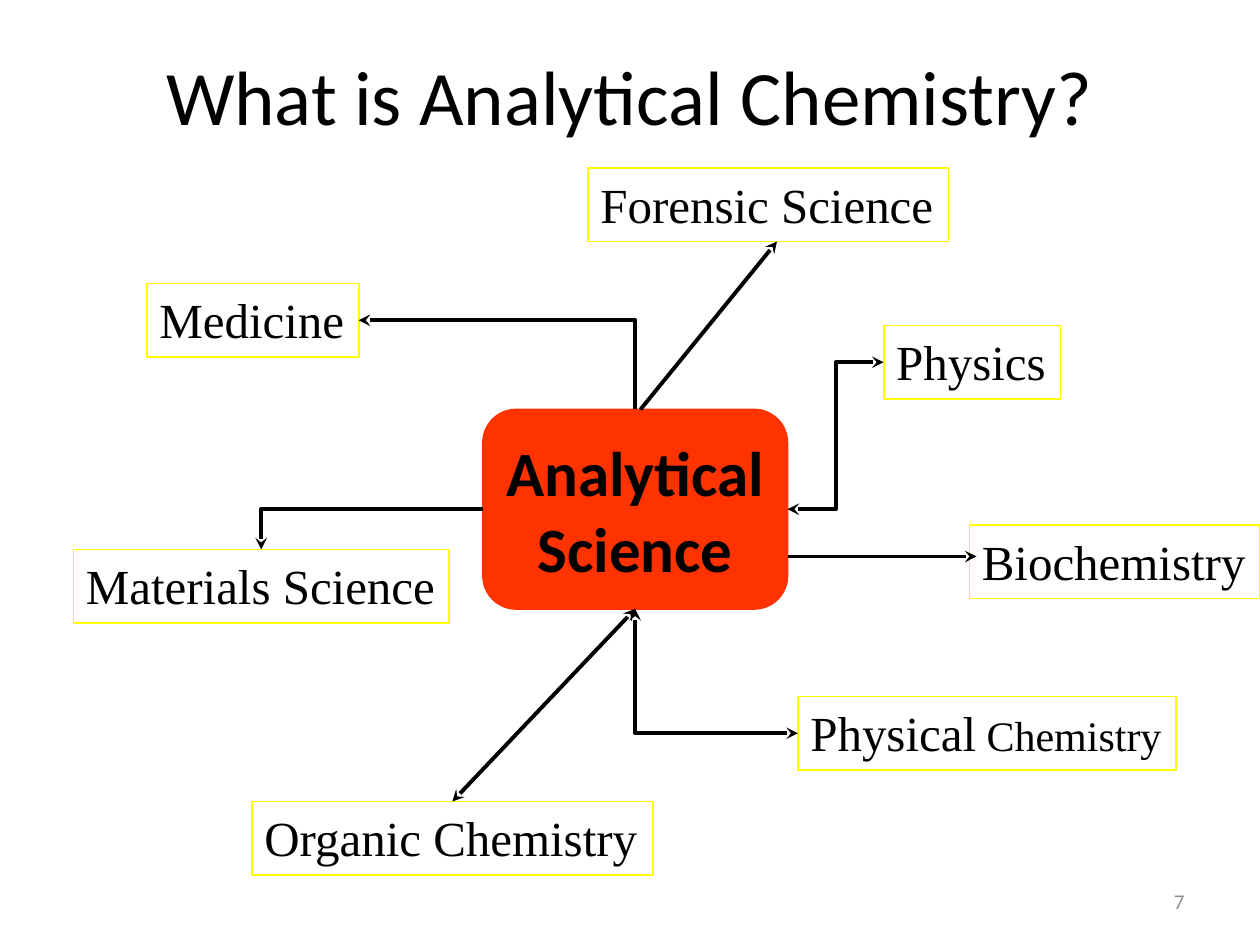
from lxml import etree
from pptx import Presentation
from pptx.dml.color import RGBColor
from pptx.enum import shapes, text
from pptx.oxml.ns import qn
from pptx.util import Pt

COLORS = {"ink": "000000", "hub": "FF3300", "border": "FFFF00", "number": "8C8C8C"}
HUB = (276, 234, 174, 114)
FIELDS = {
    "forensic": ((336, 96, 206, 42), [("Forensic Science", 28)]),
    "medicine": ((84, 162, 121, 42), [("Medicine", 28)]),
    "physics": ((505, 186, 101, 42), [("Physics", 28)]),
    "materials": ((42, 314, 214.5, 42), [("Materials Science", 28)]),
    "biochemistry": ((554, 300, 166, 42), [("Biochemistry", 28)]),
    "physical": ((456, 398, 216, 42), [("Physical", 28), (" Chemistry", 24)]),
    "organic": ((144, 458, 229, 42), [("Organic Chemistry", 28)]),
}
STRAIGHT = shapes.MSO_CONNECTOR.STRAIGHT
ELBOW = shapes.MSO_CONNECTOR.ELBOW


def color(name):
    """Return the named colour."""
    return RGBColor.from_string(COLORS[name])


def side(box, index):
    """Return the middle of a box side: 0 top, 1 left, 2 bottom, 3 right."""
    left, top, width, height = box
    return [
        (left + width / 2, top),
        (left, top + height / 2),
        (left + width / 2, top + height),
        (left + width, top + height / 2),
    ][index]


def style_font(font, name, size, ink="ink", bold=False):
    """Set the face, size, weight and colour of a font."""
    font.name, font.size, font.bold = name, Pt(size), bold
    font.color.rgb = color(ink)


def add_line(slide, box, label, size, align, ink="ink"):
    """Place one line of Calibri text, centred vertically in the box."""
    shape = slide.shapes.add_textbox(*map(Pt, box))
    frame = shape.text_frame
    frame.word_wrap = True
    frame.vertical_anchor = text.MSO_ANCHOR.MIDDLE
    paragraph = frame.paragraphs[0]
    paragraph.text = label
    paragraph.alignment = align
    style_font(paragraph.font, "Calibri", size, ink)


def add_hub(slide, box):
    """Place the central rounded box and return it."""
    shape = slide.shapes.add_shape(
        shapes.MSO_SHAPE.ROUNDED_RECTANGLE, *map(Pt, box))
    shape.shadow.inherit = False
    shape.fill.solid()
    shape.fill.fore_color.rgb = shape.line.color.rgb = color("hub")
    shape.line.width = Pt(1)
    frame = shape.text_frame
    frame.word_wrap = False
    frame.vertical_anchor = text.MSO_ANCHOR.MIDDLE
    frame.text = "Analytical\nScience"
    for paragraph in frame.paragraphs:
        paragraph.alignment = text.PP_ALIGN.CENTER
        style_font(paragraph.font, "Calibri", 36, bold=True)
    return shape


def add_field(slide, box, parts):
    """Place the outlined box of one field and return it."""
    shape = slide.shapes.add_textbox(*map(Pt, box))
    shape.line.color.rgb = color("border")
    shape.line.width = Pt(1)
    shape.text_frame.word_wrap = False
    paragraph = shape.text_frame.paragraphs[0]
    for label, size in parts:
        run = paragraph.add_run()
        run.text = label
        style_font(run.font, "Times New Roman", size)
    return shape


def add_arrow(slide, begin, end, ends, kind=STRAIGHT, corner=False):
    """Draw an arrow; a corner arrow runs horizontally first, then vertically."""
    connector = slide.shapes.add_connector(kind, *map(Pt, begin + end))
    connector.line.color.rgb = color("ink")
    connector.line.width = Pt(2.25)
    properties = connector._element.spPr
    if corner:
        properties.find(qn("a:prstGeom")).set("prst", "bentConnector2")
    line = connector.line._get_or_add_ln()
    for name in ends:
        etree.SubElement(line, qn(f"a:{name}"), type="stealth")
    etree.SubElement(properties, qn("a:effectLst"))
    return connector


def add_diagram(slide):
    """Place the hub, its fields and the arrows between them."""
    hub = add_hub(slide, HUB)
    boxes = {name: box for name, (box, _) in FIELDS.items()}
    fields = {name: add_field(slide, *field) for name, field in FIELDS.items()}
    head, tail, both = ["headEnd"], ["tailEnd"], ["headEnd", "tailEnd"]

    organic = add_arrow(slide, side(boxes["organic"], 0), side(HUB, 2), both)
    organic.begin_connect(fields["organic"], 0)
    organic.end_connect(hub, 2)
    add_arrow(slide, (366, 234), (444, 138), tail)
    add_arrow(slide, (450, 318), (558, 318), tail)

    add_arrow(slide, side(HUB, 3), side(boxes["physics"], 1), both, ELBOW)
    add_arrow(slide, side(boxes["physical"], 1), side(HUB, 2), both, ELBOW, True)
    add_arrow(slide, side(boxes["medicine"], 3), side(HUB, 0), head, ELBOW, True)
    add_arrow(slide, side(HUB, 1), side(boxes["materials"], 0), tail, ELBOW, True)


def main():
    """Build and save the presentation."""
    presentation = Presentation()
    presentation.slide_width, presentation.slide_height = Pt(720), Pt(540)
    slide = presentation.slides.add_slide(presentation.slide_layouts[6])
    add_line(slide, (54, 24, 612, 60), "What is Analytical Chemistry?", 44,
             text.PP_ALIGN.CENTER)
    add_diagram(slide)
    add_line(slide, (516, 500.5, 168, 28.75), "7", 12, text.PP_ALIGN.RIGHT, "number")
    presentation.save("out.pptx")


if __name__ == "__main__":
    main()
